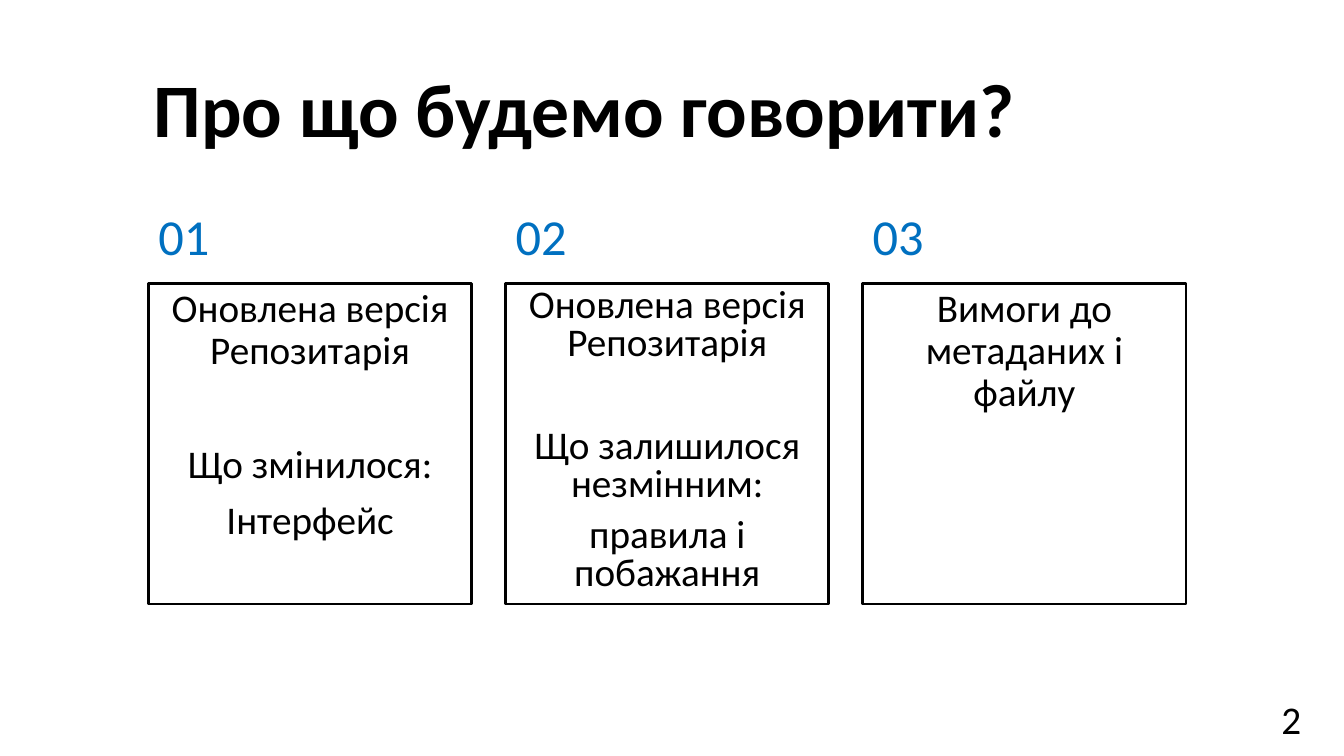
import dataclasses

import pptx
import pptx.dml.color
import pptx.enum.text
import pptx.oxml.xmlchemy
import pptx.util
from lxml import etree
from pptx.oxml.ns import qn
from pptx.util import Cm

ALIGN = pptx.enum.text.PP_ALIGN
ANCHOR = pptx.enum.text.MSO_ANCHOR


@dataclasses.dataclass(frozen=True)
class Theme:
    font: str = "Calibri"
    ink: str = "000000"
    accent: str = "0070C0"
    title_size: int = 54
    number_size: int = 36
    body_size: int = 28
    border: int = 2
    gap: int = 10


THEME = Theme()

# Number, topic, details, line spacing, space before the details in points
COLUMNS = [
    ("01", "Оновлена версія Репозитарія", ["Що змінилося:", "Інтерфейс"], 0.9, 51),
    ("02", "Оновлена версія Репозитарія",
     ["Що залишилося незмінним:", "правила і побажання"], 0.8, 47),
    ("03", "Вимоги до метаданих і файлу", [], 0.9, 0),
]


def rgb(value):
    return pptx.dml.color.RGBColor.from_string(value)


def place(shape, left, top, width, height):
    shape.left, shape.top = Cm(left), Cm(top)
    shape.width, shape.height = Cm(width), Cm(height)


def write(shape, lines, size, color=THEME.ink, bold=False, align=ALIGN.LEFT,
          anchor=ANCHOR.TOP, spacing=0.9, gap=THEME.gap):
    """Fill the shape with one unbulleted paragraph per line."""
    frame = shape.text_frame
    frame.text = "\n".join(lines)
    frame.word_wrap = True
    frame.auto_size = pptx.enum.text.MSO_AUTO_SIZE.NONE
    frame.vertical_anchor = anchor
    for para in frame.paragraphs:
        para.alignment = align
        para.line_spacing = spacing
        para.space_before = pptx.util.Pt(gap)
        properties = para._p.get_or_add_pPr()
        properties.set("marL", "0")
        properties.set("indent", "0")
        etree.SubElement(properties, qn("a:buNone"))
        for span in para.runs:
            span.font.name = THEME.font
            span.font.size = pptx.util.Pt(size)
            span.font.bold = bold
            span.font.color.rgb = rgb(color)


def add_title(page, text, box):
    title = page.shapes.title
    place(title, *box)
    write(title, [text], THEME.title_size, bold=True, align=ALIGN.CENTER,
          anchor=ANCHOR.MIDDLE, gap=0)


def add_column(heading, card, content, box):
    """Place a number above a bordered card inside the box."""
    left, top, width, height = box
    number, topic, details, spacing, details_gap = content
    card_offset = 1.91
    place(heading, left, top, width, 1.6)
    write(heading, [number], THEME.number_size, THEME.accent, anchor=ANCHOR.BOTTOM)

    place(card, left, top + card_offset, width, height - card_offset)
    card.line.color.rgb = rgb(THEME.ink)
    card.line.width = pptx.util.Pt(THEME.border)
    write(card, [topic, *details], THEME.body_size, align=ALIGN.CENTER, spacing=spacing)
    if details:
        card.text_frame.paragraphs[1].space_before = pptx.util.Pt(details_gap)


def add_columns(page, left, top, width, height, pitch):
    """Use the layout's two heading and card pairs, then text boxes."""
    bodies = [holder for holder in page.placeholders if holder != page.shapes.title
              and holder.placeholder_format.idx > 0]
    bodies.sort(key=lambda holder: holder.placeholder_format.idx)
    while len(bodies) < 2 * len(COLUMNS):
        bodies.append(page.shapes.add_textbox(0, 0, 0, 0))
    for index, content in enumerate(COLUMNS):
        heading, card = bodies[2 * index:2 * index + 2]
        add_column(heading, card, content, (left + index * pitch, top, width, height))


def add_page_number(page, number, box):
    label = page.shapes.add_textbox(0, 0, 0, 0)
    place(label, *box)
    write(label, [number], THEME.body_size, align=ALIGN.RIGHT,
          anchor=ANCHOR.MIDDLE, spacing=1.0, gap=0)


def main():
    deck = pptx.Presentation()
    deck.slide_width, deck.slide_height = Cm(33.87), Cm(19.05)
    comparison = deck.slide_layouts.get_by_name("Comparison")
    page = deck.slides.add_slide(comparison)
    add_title(page, "Про що будемо говорити?", (2.34, 1.02, 24.77, 3.68))
    add_columns(page, left=3.74, top=5.23, width=8.15, height=9.99, pitch=9)
    add_page_number(page, "2", (31.24, 17.6, 1.8, 1.02))
    deck.save("out.pptx")


if __name__ == "__main__":
    main()
